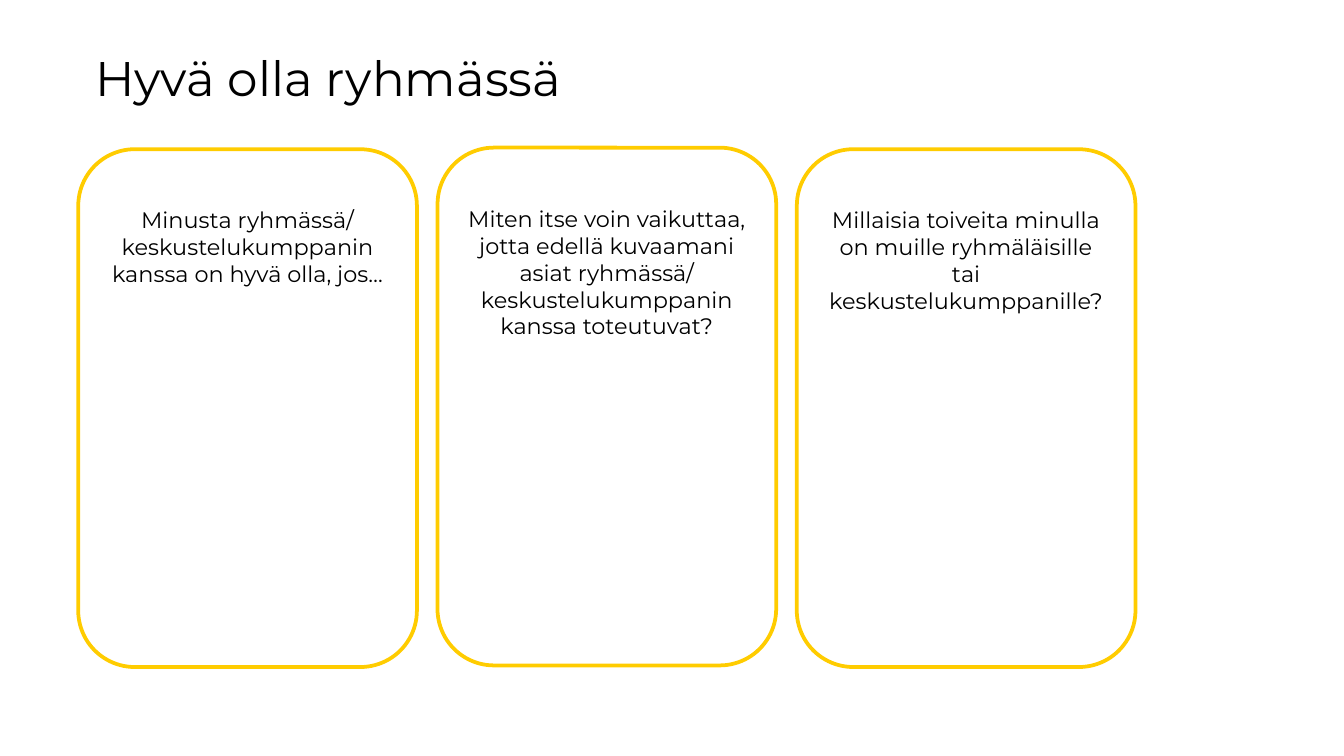
from pptx import Presentation
from pptx.dml.color import RGBColor
from pptx.enum import shapes, text
from pptx.util import Cm, Pt

BLACK = RGBColor(0x00, 0x00, 0x00)
WHITE = RGBColor(0xFF, 0xFF, 0xFF)
YELLOW = RGBColor(0xFF, 0xCC, 0x00)
FONT = "Montserrat"


def add_run(paragraph, wording, size):
    run = paragraph.add_run()
    run.text = wording
    run.font.name = FONT
    run.font.size = Pt(size)
    run.font.color.rgb = BLACK


prs = Presentation()
prs.slide_width = Cm(25.4)
prs.slide_height = Cm(14.28)
slide = prs.slides.add_slide(prs.slide_layouts[6])

heading = slide.shapes.add_textbox(Cm(1.55), Cm(0.48), Cm(19.89), Cm(1.96)).text_frame
heading.word_wrap = True
heading.vertical_anchor = text.MSO_ANCHOR.MIDDLE
heading.margin_top = heading.margin_bottom = Cm(0.25)
add_run(heading.paragraphs[0], "Hyvä olla ryhmässä", 26)

# The middle card sits slightly higher than its neighbours.
cards = [
    (2.82, "Minusta ryhmässä/ keskustelukumppanin kanssa on hyvä olla, jos…"),
    (2.79, "Miten itse voin vaikuttaa, jotta edellä kuvaamani asiat ryhmässä/ "
           "keskustelukumppanin kanssa toteutuvat?"),
    (2.82, "Millaisia toiveita minulla on muille ryhmäläisille tai "
           "keskustelukumppanille?"),
]
CARD_LEFT, CARD_PITCH = 1.48, 6.79

for column, (top, question) in enumerate(cards):
    card = slide.shapes.add_shape(
        shapes.MSO_SHAPE.ROUNDED_RECTANGLE,
        Cm(CARD_LEFT + column * CARD_PITCH), Cm(top), Cm(6.4), Cm(9.78))
    card.shadow.inherit = False
    card.fill.solid()
    card.fill.fore_color.rgb = WHITE
    card.line.color.rgb = YELLOW
    card.line.width = Pt(2)

    frame = card.text_frame
    frame.word_wrap = True
    frame.vertical_anchor = text.MSO_ANCHOR.TOP
    frame.margin_top = Cm(0.77)
    frame.paragraphs[0].alignment = text.PP_ALIGN.CENTER
    add_run(frame.paragraphs[0], question, 12)

prs.save("out.pptx")
